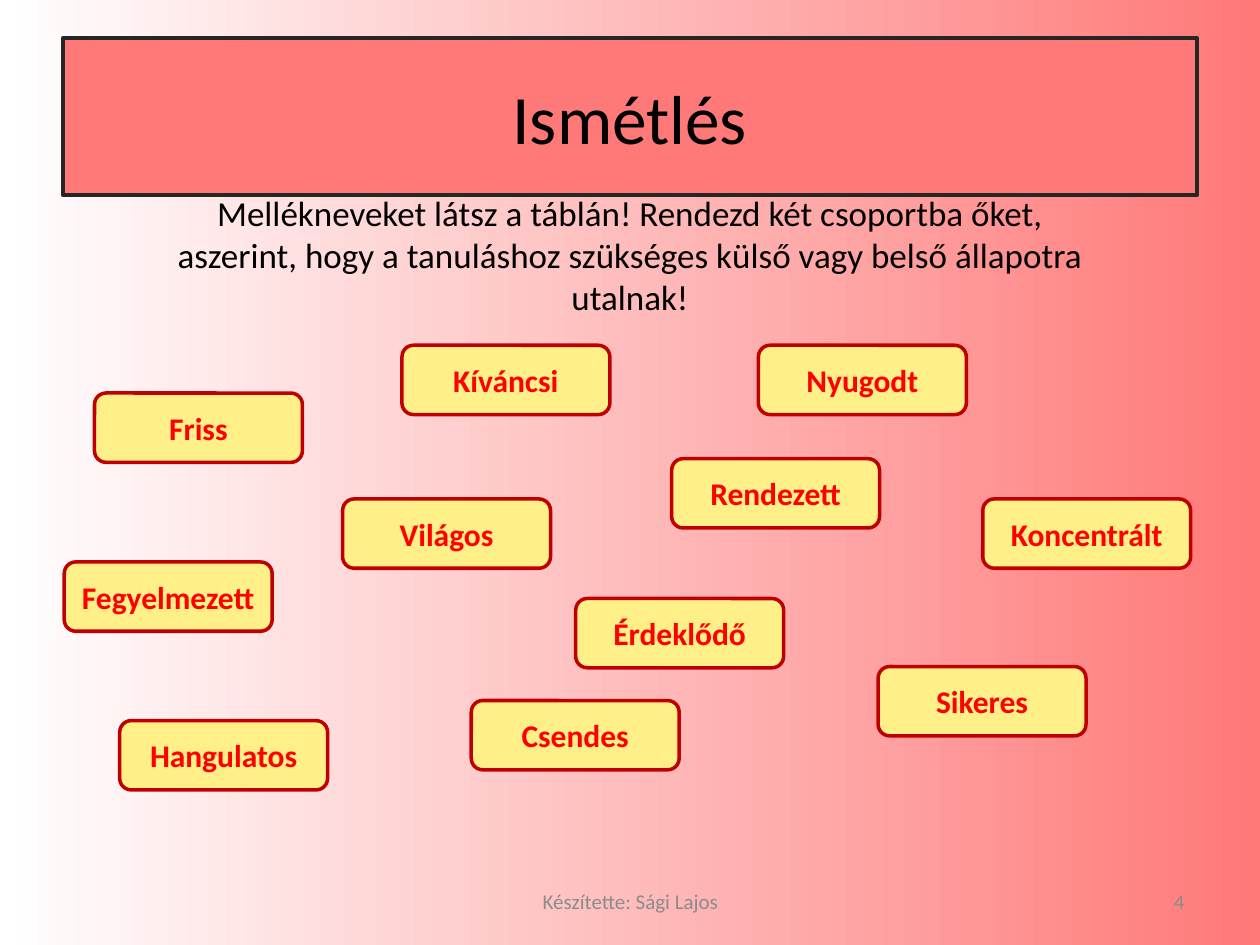
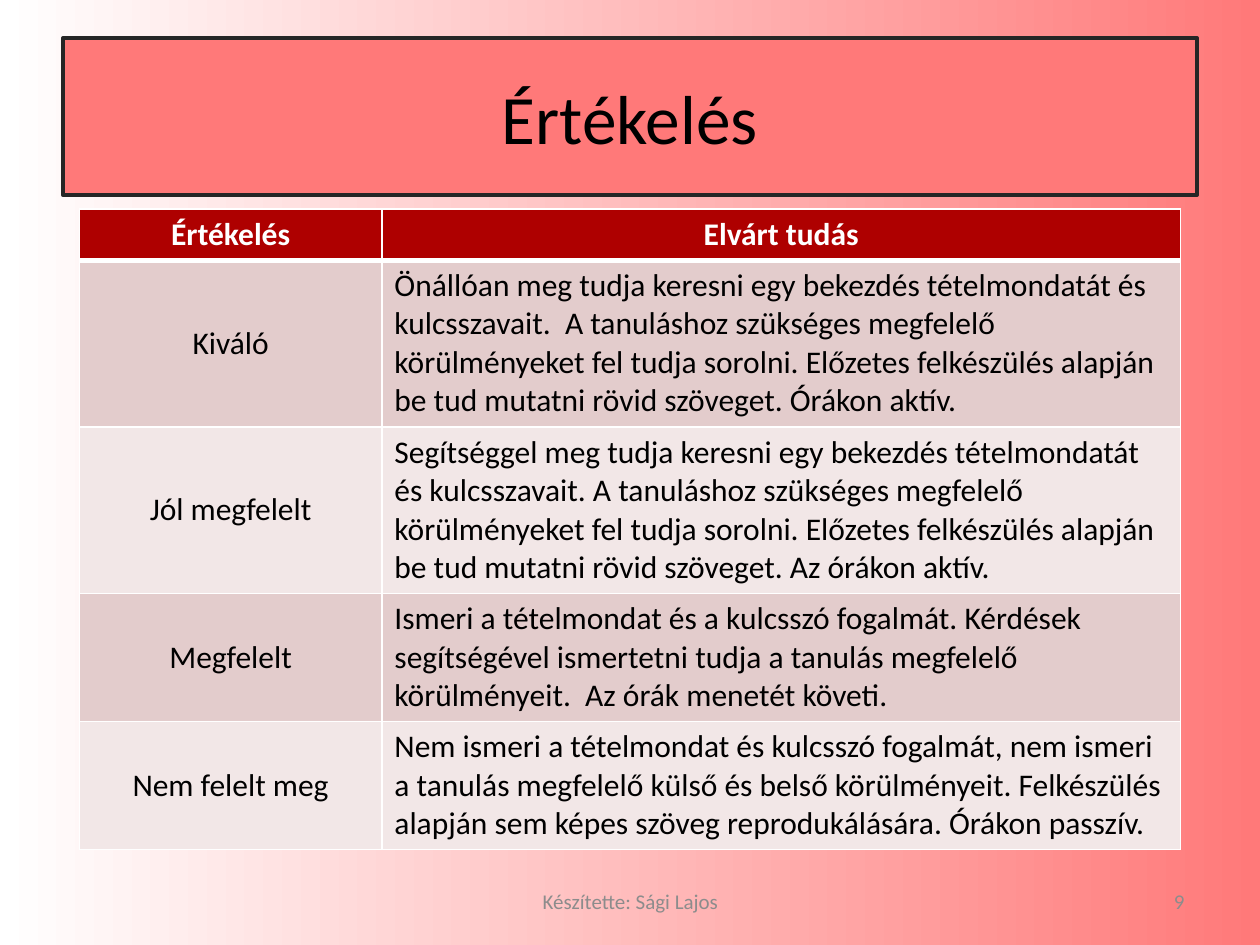
from lxml.etree import SubElement
from pptx import Presentation
from pptx.dml.color import RGBColor
from pptx.enum.shapes import MSO_SHAPE as Shape
from pptx.enum.text import MSO_ANCHOR as Anchor, PP_ALIGN as Align
from pptx.oxml.ns import qn
from pptx.util import Pt

FONT = "Calibri"
COLORS = {
    "white": "FFFFFF",
    "coral": "FF7979",
    "outline": "262626",
    "text": "000000",
    "footer": "8C8C8C",
    "tag": "FFEF89",
    "tag_line": "C00000",
    "tag_text": "FF0000",
    "header": "AE0000",
    "band_dark": "E3CCCC",
    "band_light": "F2E7E7",
}
FORMATS = {
    "title": {"size": 39.6, "color": "text", "bold": False},
    "task": {"size": 20, "color": "text", "bold": False},
    "tag": {"size": 18, "color": "tag_text", "bold": True},
    "footer": {"size": 12, "color": "footer", "bold": False},
    "header": {"size": 18, "color": "white", "bold": True},
    "cell": {"size": 18, "color": "text", "bold": False},
}
FOOTER = "Készítette: Sági Lajos"
TAG_SIZE = (118.8, 39.6)
LINE_HEIGHT, CELL_PADDING = 22, 7.2


def rgb(name):
    return RGBColor.from_string(COLORS[name])


class SlideBuilder:
    """Holds the deck style and the current page."""

    def __init__(self, deck):
        self.deck = deck
        self.page = None

    def new_page(self, title, number):
        self.page = self.deck.slides.add_slide(self.deck.slide_layouts[6])
        # Background fades from white on the left to coral on the right
        fill = self.page.background.fill
        fill.gradient()
        fill.gradient_angle = 0
        for stop, name in zip(fill.gradient_stops, ("white", "coral")):
            stop.color.rgb = rgb(name)
        # Title band and footer
        self.shape(Shape.RECTANGLE, (36, 21.6, 648, 90), title, "title", "coral", "outline")
        self.label((246.2, 500.4, 228.2, 28.8), FOOTER, "footer")
        self.label((516.2, 500.4, 167.8, 28.8), str(number), "footer", Align.RIGHT)

    def put_text(self, frame, text, style, align=Align.CENTER):
        para = frame.paragraphs[0]
        para.alignment = align
        span = para.add_run()
        span.text = text
        look = FORMATS[style]
        values = {"name": FONT, "size": Pt(look["size"]), "bold": look["bold"]}
        for key, value in values.items():
            setattr(span.font, key, value)
        span.font.color.rgb = rgb(look["color"])

    def shape(self, kind, area, text, style, fill, line):
        box = self.page.shapes.add_shape(kind, *map(Pt, area))
        box.shadow.inherit = False
        box.fill.solid()
        box.fill.fore_color.rgb = rgb(fill)
        box.line.color.rgb = rgb(line)
        box.line.width = Pt(2)
        box.text_frame.vertical_anchor = Anchor.MIDDLE
        self.put_text(box.text_frame, text, style)

    def label(self, area, text, style, align=Align.CENTER, anchor=Anchor.MIDDLE):
        box = self.page.shapes.add_textbox(*map(Pt, area))
        box.text_frame.word_wrap = True
        box.text_frame.vertical_anchor = anchor
        self.put_text(box.text_frame, text, style, align)

    def borders(self, cell, widths):
        properties = cell._tc.get_or_add_tcPr()
        for side, width in widths.items():
            line = SubElement(properties, qn(f"a:ln{side}"), w=str(Pt(width)))
            solid = SubElement(line, qn("a:solidFill"))
            SubElement(solid, qn("a:srgbClr"), val=COLORS["white"])

    def table(self, left, top, widths, rows, line_counts):
        heights = [LINE_HEIGHT * count + CELL_PADDING for count in line_counts]
        area = (left, top, sum(widths), sum(heights))
        grid = self.page.shapes.add_table(len(rows), len(widths), *map(Pt, area)).table
        for column, width in zip(grid.columns, widths):
            column.width = Pt(width)
        for i, (row, height) in enumerate(zip(rows, heights)):
            grid.rows[i].height = Pt(height)
            fill = "header" if i == 0 else ("band_light", "band_dark")[i % 2]
            for j, text in enumerate(row):
                cell = grid.cell(i, j)
                self.borders(cell, {"L": 1, "R": 1, "T": 3 if i == 1 else 1, "B": 3 if i == 0 else 1})
                cell.fill.solid()
                cell.fill.fore_color.rgb = rgb(fill)
                centred = i == 0 or j == 0
                cell.vertical_anchor = Anchor.MIDDLE if i and j == 0 else Anchor.TOP
                self.put_text(cell.text_frame, text, "cell" if i else "header",
                              Align.CENTER if centred else Align.LEFT)


TASK = ("Mellékneveket látsz a táblán! Rendezd két csoportba őket, aszerint, hogy a "
        "tanuláshoz szükséges külső vagy belső állapotra utalnak!")
ADJECTIVES = {
    "Friss": (54, 224.6),
    "Kíváncsi": (229.7, 197.3),
    "Nyugodt": (433.4, 197.3),
    "Koncentrált": (561.6, 285.1),
    "Sikeres": (501.8, 380.9),
    "Rendezett": (383.8, 262.1),
    "Világos": (195.8, 285.1),
    "Érdeklődő": (329, 342),
    "Csendes": (269.3, 400.3),
    "Fegyelmezett": (36.7, 321.1),
    "Hangulatos": (68.4, 411.8),
}
GRADES = [
    ("Értékelés", "Elvárt tudás"),
    ("Kiváló",
     "Önállóan meg tudja keresni egy bekezdés tételmondatát és kulcsszavait.  A tanuláshoz "
     "szükséges megfelelő körülményeket fel tudja sorolni. Előzetes felkészülés alapján be "
     "tud mutatni rövid szöveget. Órákon aktív."),
    ("Jól megfelelt",
     "Segítséggel meg tudja keresni egy bekezdés tételmondatát és kulcsszavait. A tanuláshoz "
     "szükséges megfelelő körülményeket fel tudja sorolni. Előzetes felkészülés alapján be "
     "tud mutatni rövid szöveget. Az órákon aktív."),
    ("Megfelelt",
     "Ismeri a tételmondat és a kulcsszó fogalmát. Kérdések segítségével ismertetni tudja a "
     "tanulás megfelelő körülményeit.  Az órák menetét követi."),
    ("Nem felelt meg",
     "Nem ismeri a tételmondat és kulcsszó fogalmát, nem ismeri a tanulás megfelelő külső és "
     "belső körülményeit. Felkészülés alapján sem képes szöveg reprodukálására. Órákon passzív."),
]


def main():
    deck = Presentation()
    deck.slide_width, deck.slide_height = Pt(720), Pt(540)
    builder = SlideBuilder(deck)

    # Revision: adjectives to sort
    builder.new_page("Ismétlés", 4)
    builder.label((82.1, 105.8, 555.8, 79.9), TASK, "task", anchor=Anchor.TOP)
    for word, corner in ADJECTIVES.items():
        builder.shape(Shape.ROUNDED_RECTANGLE, corner + TAG_SIZE, word, "tag", "tag", "tag_line")

    # Assessment: grades and expected knowledge
    builder.new_page("Értékelés", 9)
    builder.table(45.4, 119.5, (172.8, 456.5), GRADES, (1, 4, 4, 3, 3))

    deck.save("out.pptx")


if __name__ == "__main__":
    main()
